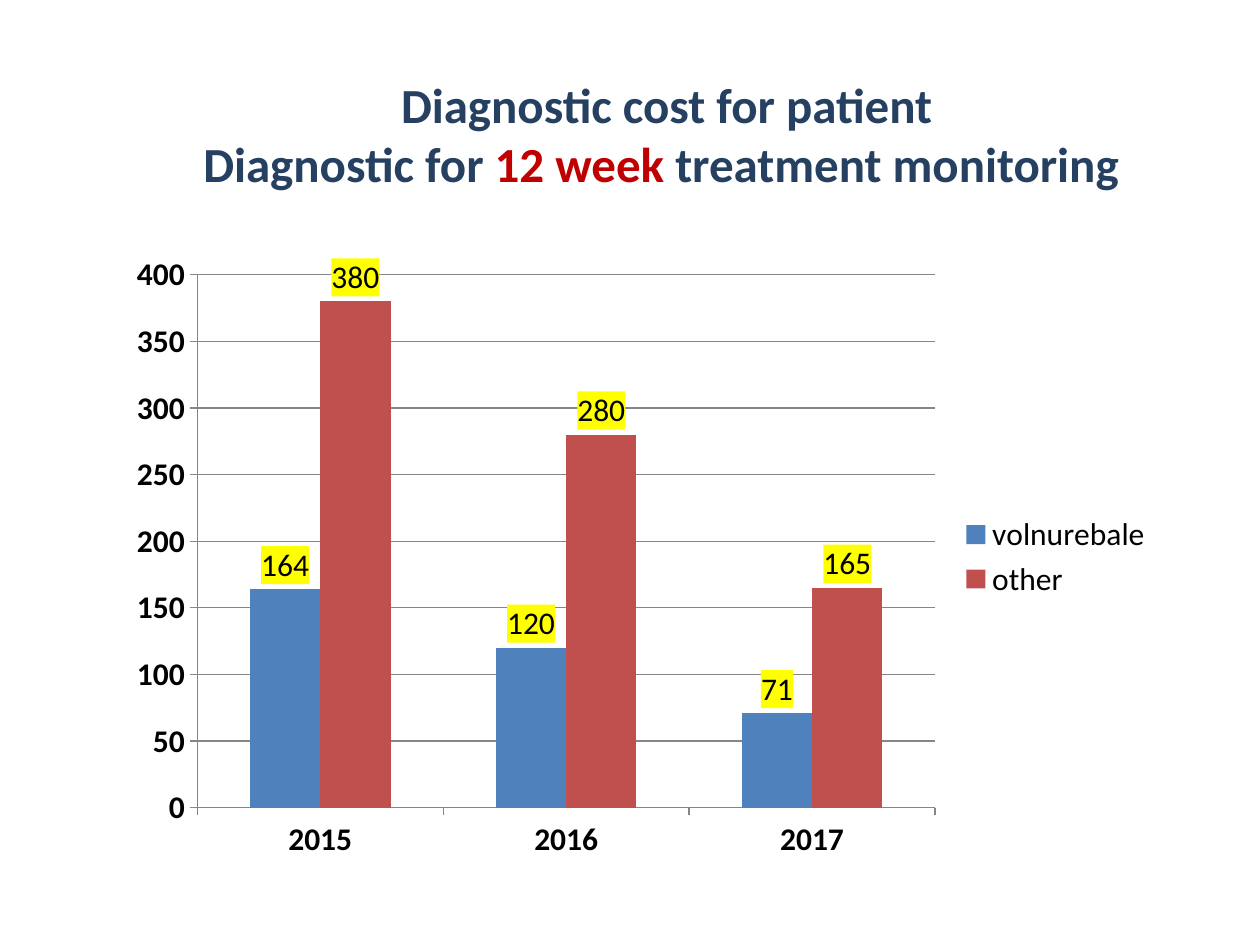
from dataclasses import dataclass

from lxml.etree import SubElement
from pptx import Presentation
from pptx.chart.data import CategoryChartData
from pptx.dml.color import RGBColor
from pptx.enum.chart import XL_CHART_TYPE as ChartType
from pptx.enum.chart import XL_LABEL_POSITION as LabelPos
from pptx.enum.chart import XL_LEGEND_POSITION as LegendPos
from pptx.enum.chart import XL_TICK_MARK as Tick
from pptx.enum.text import MSO_ANCHOR as Anchor
from pptx.enum.text import PP_ALIGN as Align
from pptx.oxml import parse_xml
from pptx.oxml.ns import nsdecls, qn
from pptx.util import Inches, Pt


@dataclass(frozen=True)
class Theme:
    font: str = "Calibri"
    title_size: int = 28
    chart_size: int = 18
    navy: str = "254061"
    accent: str = "C00000"
    black: str = "000000"
    grid: str = "868686"
    label_fill: str = "FFFF00"


@dataclass(frozen=True)
class CostSeries:
    name: str
    values: tuple[int, ...]
    color: str


THEME = Theme()
YEARS = ("2015", "2016", "2017")
COSTS = (
    CostSeries("volnurebale", (164, 120, 71), "4F81BD"),
    CostSeries("other", (380, 280, 165), "C0504D"),
)


def rgb(color: str) -> RGBColor:
    return RGBColor.from_string(color)


def add_title(s) -> None:
    sp = s.shapes.add_textbox(Inches(1.19), Inches(0.18), Inches(8.2), Inches(1.76))
    tf = sp.text_frame
    tf.word_wrap = True
    tf.vertical_anchor = Anchor.MIDDLE
    p = tf.paragraphs[0]
    p.alignment = Align.CENTER
    p.font.name, p.font.size, p.font.bold = THEME.font, Pt(THEME.title_size), True

    def add_run(text: str, color: str) -> None:
        r = p.add_run()
        r.text = text
        r.font.color.rgb = rgb(color)

    add_run("Diagnostic cost for patient", THEME.navy)
    p.add_line_break()
    add_run("Diagnostic for ", THEME.navy)
    add_run("12 week ", THEME.accent)
    add_run("treatment monitoring ", THEME.navy)

    # The line break takes the title size too
    SubElement(p._p.find(qn("a:br")), qn("a:rPr"), sz=str(THEME.title_size * 100), b="1")


def style_axis(axis) -> None:
    axis.major_tick_mark = Tick.OUTSIDE
    axis.minor_tick_mark = Tick.NONE
    axis.tick_labels.font.bold = True
    axis.format.line.color.rgb = rgb(THEME.grid)


def style_series(series, color: str) -> None:
    series.format.fill.solid()
    series.format.fill.fore_color.rgb = rgb(color)
    series.invert_if_negative = False
    labels = series.data_labels
    labels.show_value = True
    labels.position = LabelPos.OUTSIDE_END
    # Label background
    labels._element.insert(0, parse_xml(
        f'<c:spPr {nsdecls("c", "a")}><a:solidFill>'
        f'<a:srgbClr val="{THEME.label_fill}"/></a:solidFill></c:spPr>'))


def add_cost_chart(s) -> None:
    data = CategoryChartData()
    data.categories = YEARS
    for cost in COSTS:
        data.add_series(cost.name, cost.values)
    chart = s.shapes.add_chart(ChartType.COLUMN_CLUSTERED, Inches(0.92), Inches(1.93),
                               Inches(8.33), Inches(4.98), data).chart
    chart.has_title = False
    chart.font.name, chart.font.size = THEME.font, Pt(THEME.chart_size)
    chart.font.color.rgb = rgb(THEME.black)

    # Legend
    chart.has_legend = True
    chart.legend.position = LegendPos.RIGHT
    chart.legend.include_in_layout = False

    # Axes and gridlines
    style_axis(chart.category_axis)
    style_axis(chart.value_axis)
    chart.value_axis.has_major_gridlines = True
    chart.value_axis.major_gridlines.format.line.color.rgb = rgb(THEME.grid)

    # Columns
    plot = chart.plots[0]
    plot.gap_width = 150
    plot.overlap = 0
    plot.vary_by_categories = False
    for series, cost in zip(plot.series, COSTS):
        style_series(series, cost.color)


def main() -> None:
    prs = Presentation()
    prs.slide_width, prs.slide_height = Inches(10), Inches(7.5)
    s = prs.slides.add_slide(prs.slide_layouts[6])
    add_title(s)
    add_cost_chart(s)
    prs.save("out.pptx")


if __name__ == "__main__":
    main()
